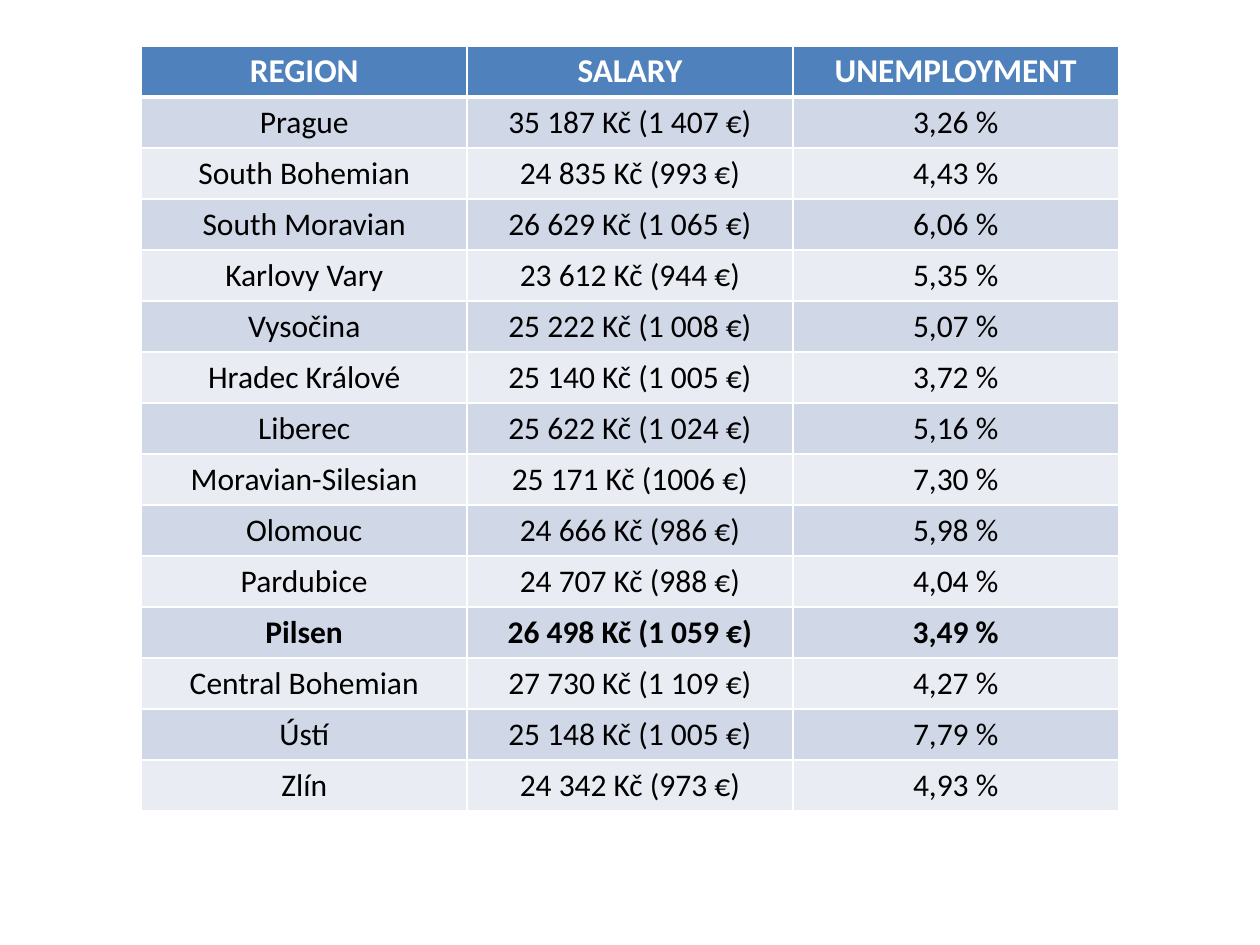
from lxml import etree
from pptx import Presentation
from pptx.dml.color import RGBColor
from pptx.enum import text
from pptx.oxml.ns import qn
from pptx.util import Pt

COLORS = {
    "header": "4F81BD",
    "odd": "D0D8E7",
    "even": "E9ECF3",
    "white": "FFFFFF",
    "black": "000000",
}
HEADINGS = ("REGION", "SALARY", "UNEMPLOYMENT")
REGIONS = [
    ("Prague", "35 187 Kč (1 407 €)", "3,26 %"),
    ("South Bohemian", "24 835 Kč (993 €)", "4,43 %"),
    ("South Moravian", "26 629 Kč (1 065 €)", "6,06 %"),
    ("Karlovy Vary", "23 612 Kč (944 €)", "5,35 %"),
    ("Vysočina", "25 222 Kč (1 008 €)", "5,07 %"),
    ("Hradec Králové", "25 140 Kč (1 005 €)", "3,72 %"),
    ("Liberec", "25 622 Kč (1 024 €)", "5,16 %"),
    ("Moravian-Silesian", "25 171 Kč (1006 €)", "7,30 %"),
    ("Olomouc", "24 666 Kč (986 €)", "5,98 %"),
    ("Pardubice", "24 707 Kč (988 €)", "4,04 %"),
    ("Pilsen", "26 498 Kč (1 059 €)", "3,49 %"),
    ("Central Bohemian", "27 730 Kč (1 109 €)", "4,27 %"),
    ("Ústí", "25 148 Kč (1 005 €)", "7,79 %"),
    ("Zlín", "24 342 Kč (973 €)", "4,93 %"),
]
HIGHLIGHT = "Pilsen"
THIN, THICK = 0.96, 3


def rgb(name):
    return RGBColor.from_string(COLORS[name])


def write(cell, wording, size=18, color="black", bold=False):
    paragraph = cell.text_frame.paragraphs[0]
    paragraph.alignment = text.PP_ALIGN.CENTER
    run = paragraph.add_run()
    run.text = wording
    run.font.name = "Calibri"
    run.font.size = Pt(size)
    run.font.bold = bold
    run.font.color.rgb = rgb(color)


def set_borders(cell, top=THIN, bottom=THIN):
    """Draw white cell borders; call before filling, as the schema puts lines first."""
    properties = cell._tc.get_or_add_tcPr()
    for side, width in (("L", THIN), ("R", THIN), ("T", top), ("B", bottom)):
        line = etree.SubElement(properties, qn(f"a:ln{side}"), w=str(Pt(width)))
        fill = etree.SubElement(line, qn("a:solidFill"))
        etree.SubElement(fill, qn("a:srgbClr"), val=COLORS["white"])


def add_region_table(slide, left, top, width, height):
    rows = [HEADINGS, *REGIONS]
    table = slide.shapes.add_table(
        len(rows), len(HEADINGS), Pt(left), Pt(top), Pt(width), Pt(height)
    ).table
    for column in table.columns:
        column.width = Pt(width / len(HEADINGS))
    for number, values in enumerate(rows):
        table.rows[number].height = Pt(height / len(rows))
        is_header = number == 0
        band = "header" if is_header else "odd" if number % 2 else "even"
        if is_header:
            style = {"size": 19, "color": "white", "bold": True}
        else:
            style = {"bold": values[0] == HIGHLIGHT}
        for position, value in enumerate(values):
            cell = table.cell(number, position)
            cell.margin_top = cell.margin_bottom = Pt(2)
            cell.vertical_anchor = text.MSO_ANCHOR.MIDDLE
            set_borders(
                cell,
                top=THICK if number == 1 else THIN,
                bottom=THICK if is_header else THIN,
            )
            cell.fill.solid()
            cell.fill.fore_color.rgb = rgb(band)
            write(cell, value, **style)


def main():
    deck = Presentation()
    deck.slide_width, deck.slide_height = Pt(720), Pt(540)
    slide = deck.slides.add_slide(deck.slide_layouts[6])
    add_region_table(slide, left=80.8, top=26.2, width=558.4, height=437.2)
    deck.save("out.pptx")


if __name__ == "__main__":
    main()
